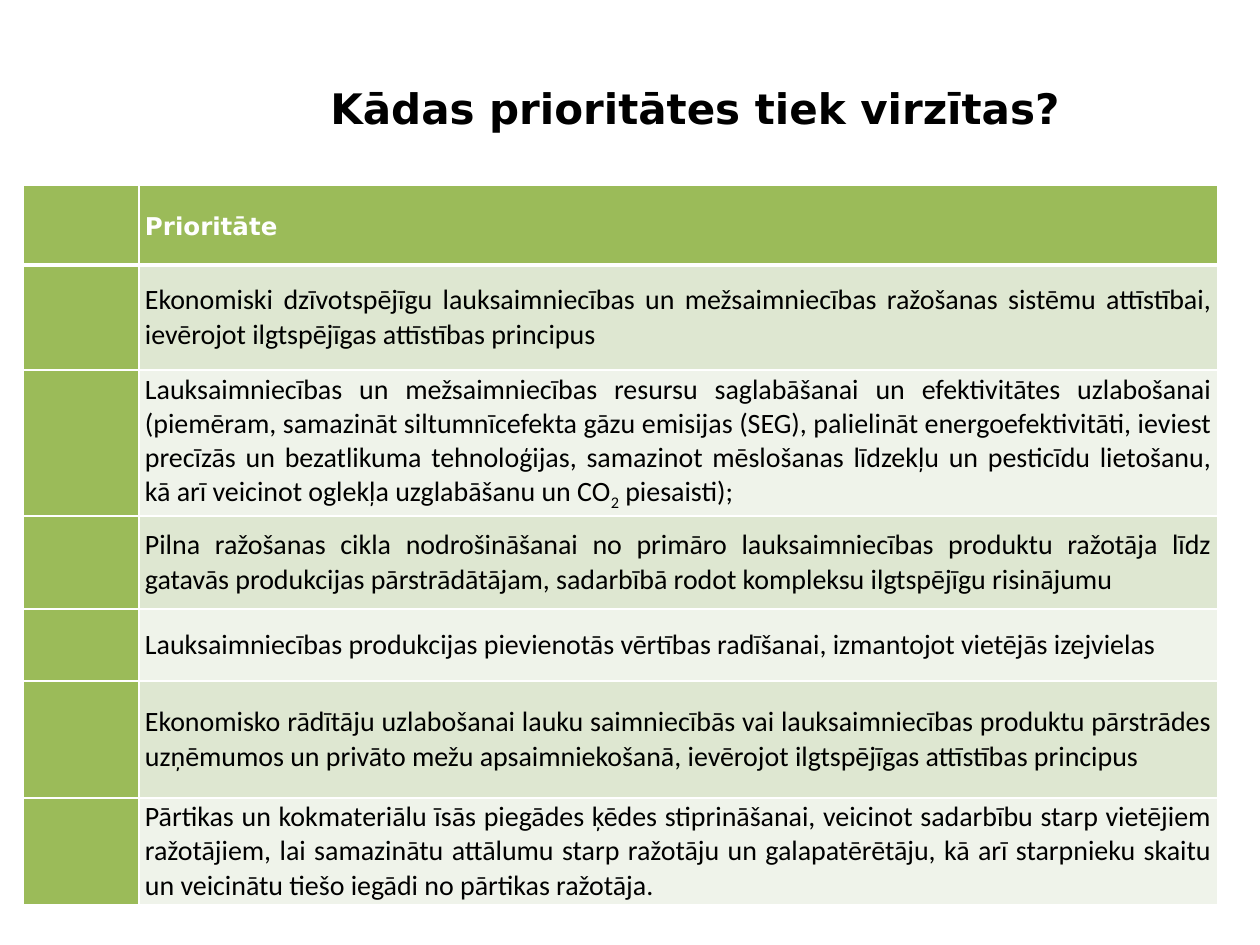
import pptx
import pptx.dml.color
import pptx.enum.text
import pptx.oxml
import pptx.oxml.ns
import pptx.util

TITLE = "Kādas prioritātes tiek virzītas?"
HEADER = "Prioritāte"
# Each priority is a list of runs; the odd ones are subscripts.
PRIORITIES = [
    ["Ekonomiski dzīvotspējīgu lauksaimniecības un mežsaimniecības ražošanas sistēmu "
     "attīstībai, ievērojot ilgtspējīgas attīstības principus"],
    ["Lauksaimniecības un mežsaimniecības resursu saglabāšanai un efektivitātes uzlabošanai "
     "(piemēram, samazināt siltumnīcefekta gāzu emisijas (SEG), palielināt energoefektivitāti, "
     "ieviest precīzās un bezatlikuma tehnoloģijas, samazinot mēslošanas līdzekļu un pesticīdu "
     "lietošanu, kā arī veicinot oglekļa uzglabāšanu un CO", "2", " piesaisti);"],
    ["Pilna ražošanas cikla nodrošināšanai no primāro lauksaimniecības produktu ražotāja līdz "
     "gatavās produkcijas pārstrādātājam, sadarbībā rodot kompleksu ilgtspējīgu risinājumu"],
    ["Lauksaimniecības produkcijas pievienotās vērtības radīšanai, izmantojot vietējās "
     "izejvielas"],
    ["Ekonomisko rādītāju uzlabošanai lauku saimniecībās vai lauksaimniecības produktu "
     "pārstrādes uzņēmumos un privāto mežu apsaimniekošanā, ievērojot ilgtspējīgas attīstības "
     "principus"],
    ["Pārtikas un kokmateriālu īsās piegādes ķēdes stiprināšanai, veicinot sadarbību starp "
     "vietējiem ražotājiem, lai samazinātu attālumu starp ražotāju un galapatērētāju, kā arī "
     "starpnieku skaitu un veicinātu tiešo iegādi no pārtikas ražotāja."],
]
COLUMN_WIDTHS = [116, 1079]
ROW_HEIGHTS = [80, 105, 146, 93, 72, 117, 107]
GREEN, WHITE, BLACK = "9BBB59", "FFFFFF", "000000"
BANDS = ["DEE7D1", "EFF3EA"]


def px(length):
    return pptx.util.Emu(round(length * 914400 / 126))


def colour(hex_string):
    return pptx.dml.color.RGBColor.from_string(hex_string)


def format_run(run, font, size, hex_string, bold=False):
    run.font.name = font
    run.font.size = pptx.util.Pt(size)
    run.font.color.rgb = colour(hex_string)
    run.font.bold = bold


def style_cell(cell, fill, top, bottom):
    """Fill the cell and rule it in white; top and bottom are line widths in points."""
    properties = cell._tc.get_or_add_tcPr()
    for side, width in (("L", 1), ("R", 1), ("T", top), ("B", bottom)):
        properties.append(pptx.oxml.parse_xml(
            f'<a:ln{side} {pptx.oxml.ns.nsdecls("a")} w="{pptx.util.Pt(width)}">'
            f'<a:solidFill><a:srgbClr val="{WHITE}"/></a:solidFill></a:ln{side}>'))
    cell.fill.solid()
    cell.fill.fore_color.rgb = colour(fill)


def write_cell(cell, runs, font, size, hex_string, bold=False):
    cell.vertical_anchor = pptx.enum.text.MSO_ANCHOR.MIDDLE
    cell.margin_left = cell.margin_right = px(6)
    cell.margin_top = cell.margin_bottom = 0
    paragraph = cell.text_frame.paragraphs[0]
    paragraph.alignment = pptx.enum.text.PP_ALIGN.JUSTIFY
    for index, text in enumerate(runs):
        run = paragraph.add_run()
        run.text = text
        format_run(run, font, size, hex_string, bold)
        if index % 2:
            run.font._element.set("baseline", "-25000")


def add_title(slide):
    title = slide.shapes.add_textbox(px(318), px(71), px(840), px(73))
    frame = title.text_frame
    frame.word_wrap = True
    frame.vertical_anchor = pptx.enum.text.MSO_ANCHOR.MIDDLE
    frame.text = TITLE
    format_run(frame.paragraphs[0].runs[0], "DejaVu Sans", 24, BLACK, bold=True)


def add_priorities(slide):
    table = slide.shapes.add_table(
        len(ROW_HEIGHTS), len(COLUMN_WIDTHS), px(23), px(185),
        px(sum(COLUMN_WIDTHS)), px(sum(ROW_HEIGHTS))).table
    table.first_row = table.horz_banding = False
    for column, width in zip(table.columns, COLUMN_WIDTHS):
        column.width = px(width)
    for index, height in enumerate(ROW_HEIGHTS):
        table.rows[index].height = px(height)
        band = BANDS[(index - 1) % 2] if index else GREEN
        for column, fill in enumerate([GREEN, band]):
            style_cell(table.cell(index, column), fill,
                       top=3 if index == 1 else 1, bottom=3 if index == 0 else 1)

    header = table.cell(0, 1)
    write_cell(header, [HEADER], "DejaVu Sans", 14, WHITE, bold=True)
    header.text_frame.paragraphs[0].line_spacing = 1.15
    for index, runs in enumerate(PRIORITIES, start=1):
        write_cell(table.cell(index, 1), runs, "Calibri", 16, BLACK)


def main():
    presentation = pptx.Presentation()
    presentation.slide_width, presentation.slide_height = px(1260), px(945)
    slide = presentation.slides.add_slide(presentation.slide_layouts[6])
    add_title(slide)
    add_priorities(slide)
    presentation.save("out.pptx")


if __name__ == "__main__":
    main()
